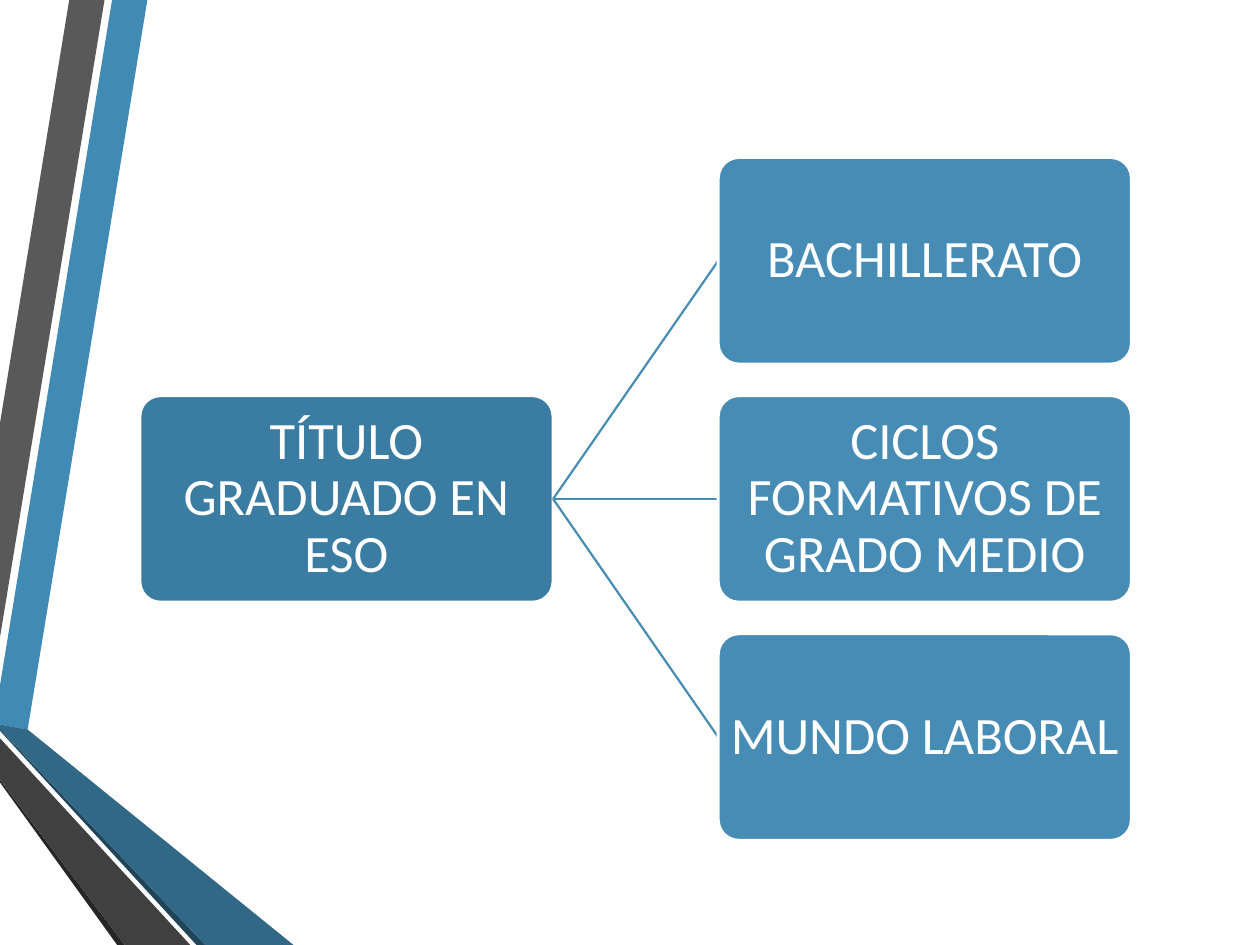
from lxml.etree import SubElement
from pptx import Presentation
from pptx.dml.color import RGBColor
from pptx.enum.shapes import MSO_CONNECTOR as CONN, MSO_SHAPE as SHAPE
from pptx.enum.text import MSO_ANCHOR as ANCHOR, PP_ALIGN as ALIGN
from pptx.oxml.ns import qn
from pptx.util import Emu, Pt

PX = 9144  # EMU per px, 100 px to the inch
WIDTH, HEIGHT = 1000, 750
COLORS = {
    "stripe": "418AB3", "gray": "595959", "dark_edge": "262626",
    "blue_edge": "20455A", "blue_fold": "316886", "dark_fold": "404040",
    "root": "3B7DA2", "branch": "478CB4", "white": "FFFFFF",
}


def px(n):
    return Emu(round(n * PX))


def rgb(name):
    return RGBColor.from_string(COLORS[name])


class Deck:
    """Holds the style and the current slide."""
    font, size = "Calibri", Pt(30)
    inset = px(2)

    def __init__(self):
        self.prs = Presentation()
        self.prs.slide_width, self.prs.slide_height = px(WIDTH), px(HEIGHT)
        self.slide = self.prs.slides.add_slide(self.prs.slide_layouts[6])

    def polygon(self, color, points):
        builder = self.slide.shapes.build_freeform(*points[0], scale=PX)
        builder.add_line_segments(points[1:], close=True)
        sp = builder.convert_to_shape()
        sp.shadow.inherit = False
        sp.fill.solid()
        sp.fill.fore_color.rgb = rgb(color)
        sp.line.fill.background()

    def box(self, text, color, x, y, w, h):
        sp = self.slide.shapes.add_shape(SHAPE.ROUNDED_RECTANGLE, px(x), px(y), px(w), px(h))
        sp.adjustments[0] = 0.1
        sp.shadow.inherit = False
        sp.fill.solid()
        sp.fill.fore_color.rgb = rgb(color)
        sp.line.color.rgb = rgb("white")
        sp.line.width = Pt(1.75)
        tf = sp.text_frame
        tf.word_wrap = True
        tf.vertical_anchor = ANCHOR.MIDDLE
        tf.margin_left = tf.margin_right = tf.margin_top = tf.margin_bottom = self.inset
        p = tf.paragraphs[0]
        p.text = text
        p.alignment = ALIGN.CENTER
        p.line_spacing = 0.9
        p.font.name, p.font.size = self.font, self.size
        p.font.color.rgb = rgb("white")

    def line(self, color, x1, y1, x2, y2):
        cxn = self.slide.shapes.add_connector(CONN.STRAIGHT, px(x1), px(y1), px(x2), px(y2))
        cxn.line.color.rgb = rgb(color)
        cxn.line.width = Pt(1.25)
        SubElement(cxn._element.spPr, qn("a:effectLst"))


def main():
    deck = Deck()

    # Folded ribbons along the left edge
    ribbons = [
        ("stripe", [(0, 544), (0, 575), (22, 579), (117, 0), (89, 0)]),
        ("gray", [(83, 0), (55, 0), (0, 336), (0, 506)]),
        ("dark_edge", [(0, 619), (0, 621), (93, HEIGHT), (99, HEIGHT)]),
        ("blue_edge", [(0, 579), (0, 580), (156, HEIGHT), (163, HEIGHT)]),
        ("blue_fold", [(0, 579), (163, HEIGHT), (233, HEIGHT), (22, 579), (0, 575)]),
        ("dark_fold", [(0, 619), (99, HEIGHT), (151, HEIGHT), (0, 586)]),
    ]
    for color, points in ribbons:
        deck.polygon(color, points)

    # Root box, level with the middle branch
    box_w, box_h = 328, 164
    root_x, branch_x = 111, 570
    top, pitch = 125, 189
    root_y = top + pitch
    deck.box("TÍTULO GRADUADO EN ESO", "root", root_x, root_y, box_w, box_h)

    # Branches, each with its line from the root
    branches = ["BACHILLERATO", "CICLOS FORMATIVOS DE GRADO MEDIO", "MUNDO LABORAL"]
    for i, text in enumerate(branches):
        y = top + i * pitch
        deck.line("branch", root_x + box_w, root_y + box_h // 2, branch_x, y + box_h // 2)
        deck.box(text, "branch", branch_x, y, box_w, box_h)

    deck.prs.save("out.pptx")


if __name__ == "__main__":
    main()
